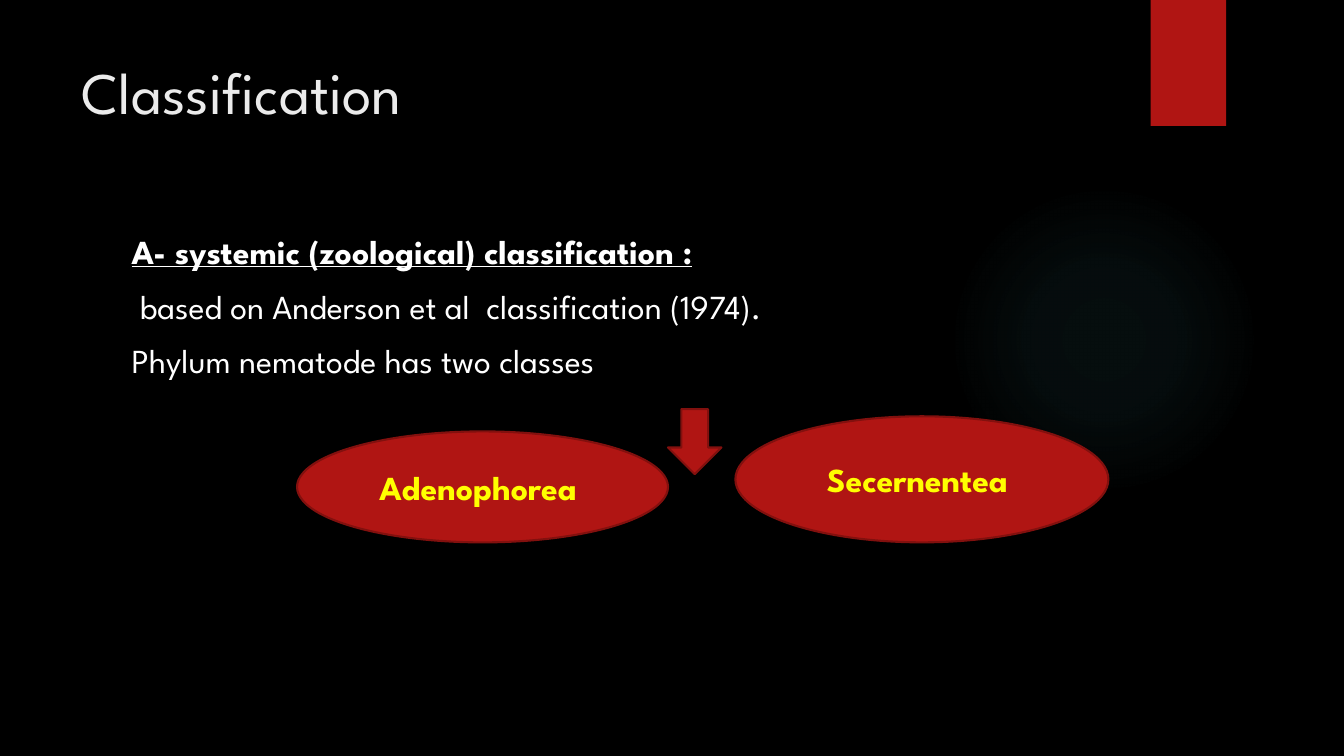
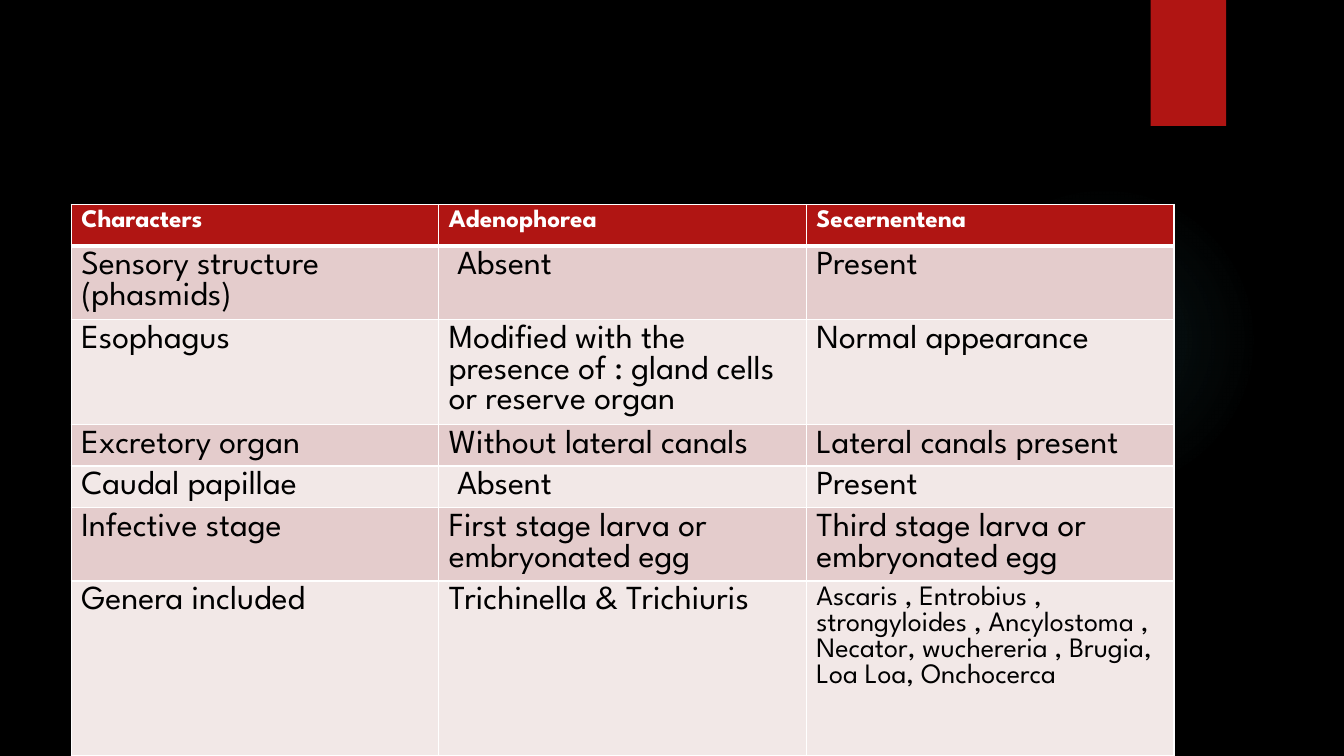
from dataclasses import dataclass

from lxml import etree
from pptx import Presentation
from pptx.dml.color import RGBColor
from pptx.enum.shapes import MSO_SHAPE
from pptx.enum.text import MSO_ANCHOR, MSO_AUTO_SIZE, PP_ALIGN
from pptx.oxml import parse_xml
from pptx.oxml.ns import nsdecls, qn
from pptx.util import Inches, Pt

OVAL, RECT, DOWN_ARROW = MSO_SHAPE.OVAL, MSO_SHAPE.RECTANGLE, MSO_SHAPE.DOWN_ARROW
TOP, MIDDLE = MSO_ANCHOR.TOP, MSO_ANCHOR.MIDDLE
LEFT, CENTER = PP_ALIGN.LEFT, PP_ALIGN.CENTER
TITLE_AND_CONTENT, BLANK = 1, 6
SLIDE_W, SLIDE_H = Inches(13.33), Inches(7.5)


@dataclass(frozen=True)
class Theme:
    font: str = "League Spartan"
    background: str = "000000"
    accent: str = "B01513"
    outline: str = "82100E"
    glow: str = "50B9C1"
    title: str = "EBEBEB"
    light: str = "FFFFFF"
    dark: str = "000000"
    highlight: str = "FFFF00"
    bands: tuple = ("E4CCCC", "F2E8E7")
    title_size: int = 42
    body_size: int = 24
    dense_size: int = 20
    header_size: int = 18
    space_before: int = 10


THEME = Theme()

# Boxes are left, top, width, height in percent of the slide.
GLOW_BOX = (70.58, 24.4, 23.1, 41.07)
TAB_BOX = (85.62, 0, 5.62, 16.67)
TITLE_BOX = (5.33, 6.67, 77.19, 20.4)
BODY_BOX = (9.05, 29.9, 73.36, 61.2)
ADENOPHOREA_BOX = (22.1, 57.07, 27.6, 14.67)
SECERNENTEA_BOX = (54.72, 55.07, 27.75, 16.67)
ARROW_BOX = (49.7, 54.13, 3.98, 8.6)
TABLE_LEFT, TABLE_TOP, TABLE_WIDTH = 5.3, 27.05, 82.05
ONE_LINE, TWO_LINES, THREE_LINES = 5.5, 9.73, 13.87
ROW_HEIGHTS = (ONE_LINE, TWO_LINES, THREE_LINES, ONE_LINE, ONE_LINE, TWO_LINES)

BODY_LINES = (
    "A- systemic (zoological) classification :",
    " based on Anderson et al  classification (1974).",
    "Phylum nematode has two classes",
)
CHARACTERS = (
    ("Characters", "Adenophorea", "Secernentena"),
    ("Sensory structure (phasmids)", " Absent", "Present"),
    ("Esophagus", "Modified with the presence of : gland cells or reserve organ",
     "Normal appearance"),
    ("Excretory organ", "Without lateral canals", "Lateral canals present"),
    ("Caudal papillae", " Absent", "Present"),
    ("Infective stage", "First stage larva or embryonated egg",
     "Third stage larva or embryonated egg"),
    ("Genera included", "Trichinella & Trichiuris",
     "Ascaris , Entrobius , strongyloides , Ancylostoma , Necator, wuchereria , "
     "Brugia, Loa Loa, Onchocerca"),
)


def rgb(color):
    return RGBColor.from_string(color)


def across(percent):
    return round(SLIDE_W * percent / 100)


def down(percent):
    return round(SLIDE_H * percent / 100)


def place(box):
    """Turn a box in percent into lengths."""
    left, top, width, height = box
    return across(left), down(top), across(width), down(height)


def format_runs(p, size, color, bold=False, underline=False):
    for r in p.runs:
        font = r.font
        font.name, font.size = THEME.font, Pt(size)
        font.bold, font.underline = bold, underline
        font.color.rgb = rgb(color)


def add_plain_shape(slide, kind, box, fill=THEME.accent, line=None):
    sp = slide.shapes.add_shape(kind, *place(box))
    sp.shadow.inherit = False
    sp.fill.solid()
    sp.fill.fore_color.rgb = rgb(fill)
    if line:
        sp.line.color.rgb = rgb(line)
        sp.line.width = Pt(1.5)
    else:
        sp.line.fill.background()
    return sp


def add_glow(slide):
    """Add a circle that fades out from its centre."""
    sp = add_plain_shape(slide, OVAL, GLOW_BOX, THEME.glow)
    stops = "".join(
        f'<a:gs pos="{pos * 1000}"><a:srgbClr val="{THEME.glow}">'
        f'<a:alpha val="{alpha * 1000}"/></a:srgbClr></a:gs>'
        for pos, alpha in ((0, 7), (36, 6), (69, 0)))
    gradient = parse_xml(
        f'<a:gradFill {nsdecls("a")} rotWithShape="1"><a:gsLst>{stops}</a:gsLst>'
        '<a:path path="circle"><a:fillToRect l="50000" t="50000" r="50000" b="50000"/>'
        '</a:path></a:gradFill>')
    solid = sp.element.spPr.find(qn("a:solidFill"))
    solid.getparent().replace(solid, gradient)


def add_slide(prs, layout):
    """Add a slide with the glow and red tab that all slides share."""
    slide = prs.slides.add_slide(prs.slide_layouts[layout])
    add_glow(slide)
    add_plain_shape(slide, RECT, TAB_BOX)
    return slide


def fill_placeholder(sp, box, lines):
    sp.left, sp.top, sp.width, sp.height = place(box)
    tf = sp.text_frame
    tf.text = "\n".join(lines)
    tf.word_wrap = True
    tf.auto_size = MSO_AUTO_SIZE.NONE
    tf.vertical_anchor = TOP
    for i, p in enumerate(tf.paragraphs):
        p.alignment = LEFT
        p.space_before = Pt(THEME.space_before if i else 0)
    return tf.paragraphs


def add_title(slide, text):
    for p in fill_placeholder(slide.shapes.title, TITLE_BOX, [text]):
        format_runs(p, THEME.title_size, THEME.title)


def add_body(slide, lines):
    """Fill the body with unbulleted lines, the first as a heading."""
    for i, p in enumerate(fill_placeholder(slide.placeholders[1], BODY_BOX, lines)):
        pPr = p._p.get_or_add_pPr()
        pPr.set("marL", "0")
        pPr.set("indent", "0")
        etree.SubElement(pPr, qn("a:buNone"))
        format_runs(p, THEME.body_size, THEME.light, bold=i == 0, underline=i == 0)


def add_class_oval(slide, box, name):
    sp = add_plain_shape(slide, OVAL, box, line=THEME.outline)
    tf = sp.text_frame
    tf.text = name
    tf.vertical_anchor = MIDDLE
    p = tf.paragraphs[0]
    p.alignment = CENTER
    format_runs(p, THEME.body_size, THEME.highlight, bold=True)


def set_borders(cell, bottom):
    tcPr = cell._tc.get_or_add_tcPr()
    for side, width in (("L", 1), ("R", 1), ("T", 1), ("B", bottom)):
        tcPr.append(parse_xml(
            f'<a:ln{side} {nsdecls("a")} w="{Pt(width)}"><a:solidFill>'
            f'<a:srgbClr val="{THEME.light}"/></a:solidFill></a:ln{side}>'))


def format_cell(cell, text, row, size):
    is_header = row == 0
    cell.text = text
    set_borders(cell, bottom=3 if is_header else 1)
    cell.fill.solid()
    cell.fill.fore_color.rgb = rgb(THEME.accent if is_header else THEME.bands[(row - 1) % 2])
    format_runs(cell.text_frame.paragraphs[0], size,
                THEME.light if is_header else THEME.dark, bold=is_header)


def add_comparison_table(slide, rows):
    """Add the table; its last row reaches the foot of the slide."""
    height = 100 - TABLE_TOP
    heights = (*ROW_HEIGHTS, height - sum(ROW_HEIGHTS))
    columns = len(rows[0])
    box = place((TABLE_LEFT, TABLE_TOP, TABLE_WIDTH, height))
    table = slide.shapes.add_table(len(rows), columns, *box).table
    for column in table.columns:
        column.width = across(TABLE_WIDTH / columns)
    last = (len(rows) - 1, columns - 1)
    for i, texts in enumerate(rows):
        table.rows[i].height = down(heights[i])
        for j, text in enumerate(texts):
            size = THEME.header_size if i == 0 else THEME.body_size
            if (i, j) == last:
                size = THEME.dense_size
            format_cell(table.cell(i, j), text, i, size)


def main():
    prs = Presentation()
    prs.slide_width, prs.slide_height = SLIDE_W, SLIDE_H
    background = prs.slide_master.background.fill
    background.solid()
    background.fore_color.rgb = rgb(THEME.background)

    slide = add_slide(prs, TITLE_AND_CONTENT)
    add_title(slide, "Classification")
    add_body(slide, BODY_LINES)
    add_class_oval(slide, SECERNENTEA_BOX, "Secernentea ")
    add_class_oval(slide, ADENOPHOREA_BOX, "Adenophorea ")
    add_plain_shape(slide, DOWN_ARROW, ARROW_BOX, line=THEME.outline)

    slide = add_slide(prs, BLANK)
    add_comparison_table(slide, CHARACTERS)

    prs.save("out.pptx")


if __name__ == "__main__":
    main()
